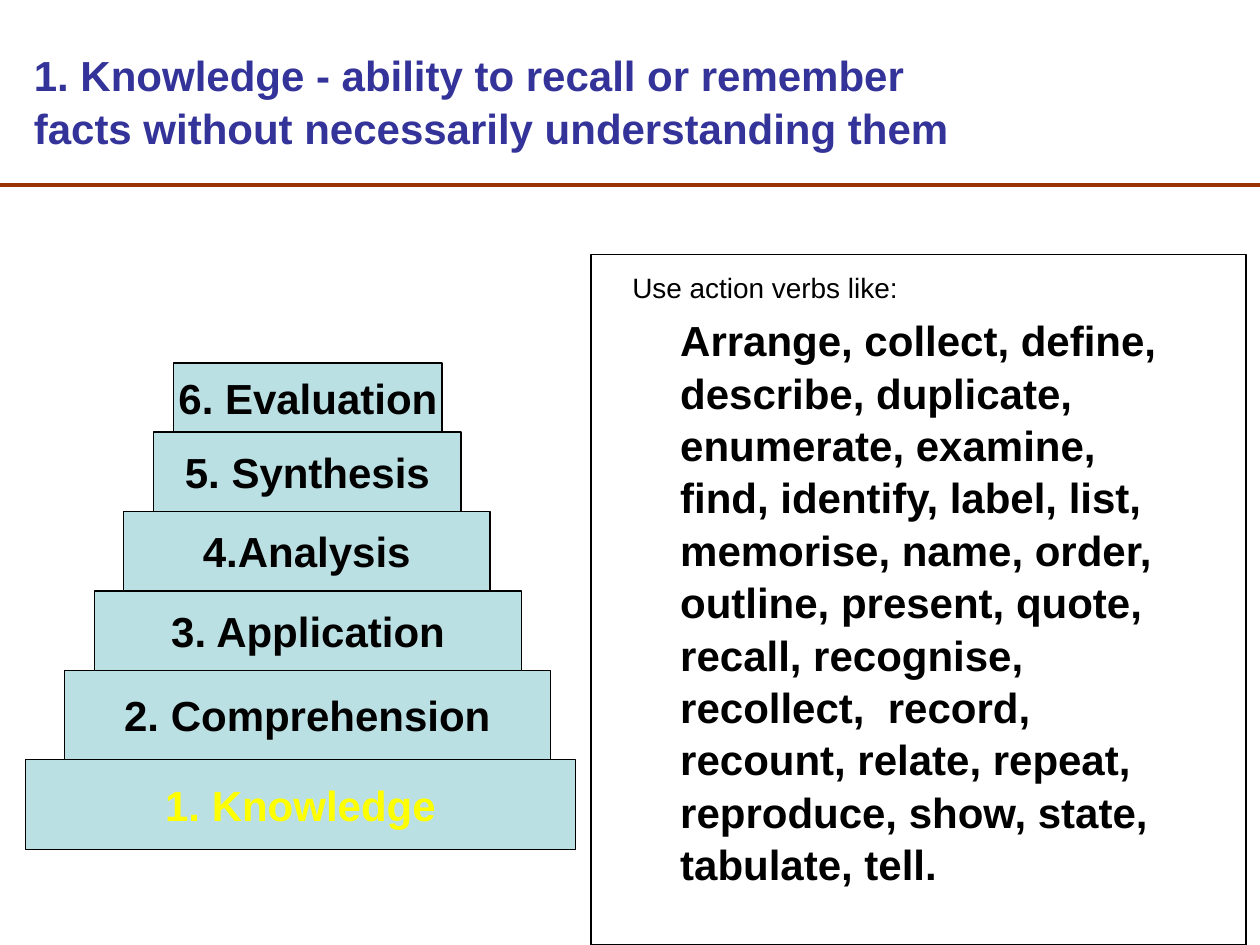
from lxml import etree
from pptx import Presentation
from pptx.dml.color import RGBColor
from pptx.enum.shapes import MSO_CONNECTOR, MSO_SHAPE
from pptx.enum.text import MSO_ANCHOR, PP_ALIGN
from pptx.oxml.ns import qn
from pptx.util import Inches, Pt

COLORS = {
    "title": "333399",
    "rule": "993300",
    "step": "BBE0E3",
    "text": "000000",
    "current": "FFFF00",
}


def rgb(name):
    return RGBColor.from_string(COLORS[name])


def write(para, text, size=24, bold=True, color="text", align=PP_ALIGN.LEFT):
    para.alignment = align
    para.text = text
    para.font.name = "Arial"
    para.font.size = Pt(size)
    para.font.bold = bold
    para.font.color.rgb = rgb(color)


deck = Presentation()
deck.slide_width, deck.slide_height = Inches(10), Inches(7.5)
page = deck.slides.add_slide(deck.slide_layouts[6])

# Rule under the title
rule = page.shapes.add_connector(
    MSO_CONNECTOR.STRAIGHT, Inches(0), Inches(1.47), Inches(10), Inches(1.47))
rule.line.color.rgb = rgb("rule")
rule.line.width = Pt(2.25)
etree.SubElement(rule.element.spPr, qn("a:effectLst"))

# Title
title = page.shapes.add_textbox(Inches(0.17), Inches(0.17), Inches(9.75), Inches(1.25))
title.text_frame.word_wrap = True
title.text_frame.vertical_anchor = MSO_ANCHOR.MIDDLE
write(title.text_frame.paragraphs[0],
      "1. Knowledge - ability to recall or remember\v"
      "facts without necessarily understanding them", color="title")
title.text_frame.paragraphs[0].line_spacing = 1.04

# Action verbs
verbs = page.shapes.add_textbox(Inches(4.92), Inches(2.1), Inches(4.42), Inches(4.95))
verbs.text_frame.word_wrap = True
write(verbs.text_frame.paragraphs[0], "Use action verbs like:", size=16, bold=False)
verb_list = verbs.text_frame.add_paragraph()
verb_list.space_before = Pt(4.8)
verb_list.line_spacing = 1.04
verb_list._p.get_or_add_pPr().set("marL", str(Inches(0.38)))
write(verb_list,
      "Arrange, collect, define, describe, duplicate, enumerate, examine, find, "
      "identify, label, list, memorise, name, order, outline, present, quote, recall, "
      "recognise, recollect,  record, recount, relate, repeat, reproduce, show, state, "
      "tabulate, tell.")

# Frame around the verbs
frame = page.shapes.add_shape(
    MSO_SHAPE.RECTANGLE, Inches(4.69), Inches(2.02), Inches(5.2), Inches(5.48))
frame.shadow.inherit = False
frame.fill.background()
frame.line.color.rgb = rgb("text")
frame.line.width = Pt(0.75)

# Pyramid, stacked from the bottom: label, left, width, height, text colour
steps = [
    ("1. Knowledge", 0.2, 4.37, 0.71, "current"),
    ("2. Comprehension", 0.51, 3.86, 0.71, "text"),
    ("3. Application", 0.75, 3.39, 0.63, "text"),
    ("4.Analysis", 0.98, 2.91, 0.63, "text"),
    ("5. Synthesis", 1.22, 2.44, 0.63, "text"),
    ("6. Evaluation", 1.38, 2.13, 0.55, "text"),
]
pyramid = page.shapes.add_group_shape()
top = 6.74
for label, left, width, height, color in steps:
    top -= height
    step = pyramid.shapes.add_shape(
        MSO_SHAPE.RECTANGLE, Inches(left), Inches(top), Inches(width), Inches(height))
    step.shadow.inherit = False
    step.fill.solid()
    step.fill.fore_color.rgb = rgb("step")
    step.line.color.rgb = rgb("text")
    step.line.width = Pt(0.75)
    step.text_frame.word_wrap = False
    step.text_frame.vertical_anchor = MSO_ANCHOR.MIDDLE
    write(step.text_frame.paragraphs[0], label, color=color, align=PP_ALIGN.CENTER)

deck.save("out.pptx")
